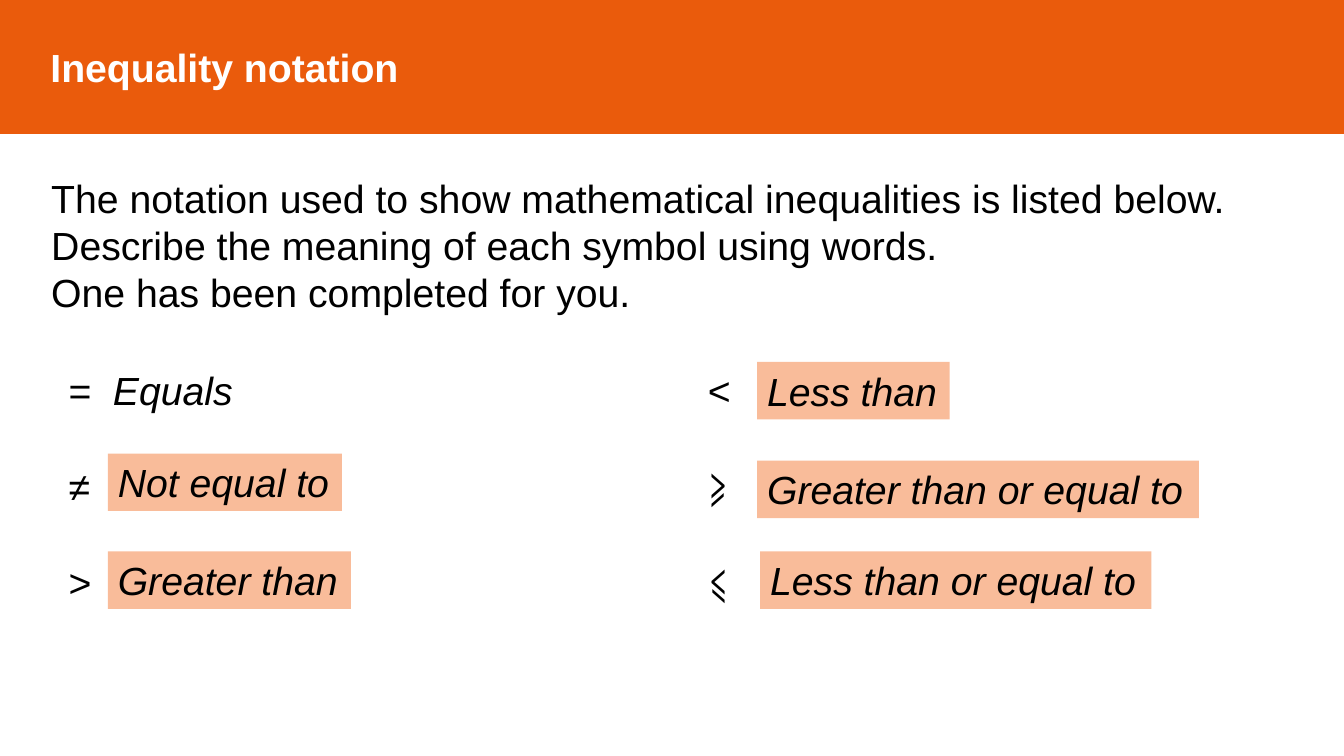
from pptx import Presentation
from pptx.dml.color import RGBColor
from pptx.enum.text import MSO_ANCHOR, MSO_AUTO_SIZE, PP_ALIGN
from pptx.oxml.xmlchemy import OxmlElement
from pptx.util import Inches, Pt

COLOURS = {"band": "EA5B0C", "answer": "F9BC9A", "text": "000000", "heading": "FFFFFF"}
INTRO = [
    "The notation used to show mathematical inequalities is listed below.",
    "Describe the meaning of each symbol using words.",
    "One has been completed for you.",
]
SYMBOL_COLUMNS = [
    (0.58, [[("=\t", False), ("Equals", True)], [("≠", False)], [(">", False)]]),
    (6.92, [[("<", False)], [("⩾", False)], [("⩽", False)]]),
]
ANSWERS = [
    ("Not equal to", 1.07, 4.5, 2.32),
    ("Greater than", 1.07, 5.47, 2.41),
    ("Less than", 7.51, 3.59, 1.91),
    ("Greater than or equal to", 7.51, 4.57, 4.38),
    ("Less than or equal to", 7.54, 5.47, 3.88),
]


def colour(name):
    return RGBColor.from_string(COLOURS[name])


def apply(target, settings):
    for name, value in settings.items():
        setattr(target, name, value)


def place(shape, left, top, width, height):
    apply(shape, {"left": Inches(left), "top": Inches(top),
                  "width": Inches(width), "height": Inches(height)})


def fill(shape, name):
    shape.fill.solid()
    shape.fill.fore_color.rgb = colour(name)


def write(paragraph, text, tint="text", **settings):
    run = paragraph.add_run()
    run.text = text
    apply(run.font, {"name": "Arial", "size": Pt(28), **settings})
    run.font.color.rgb = colour(tint)


def indent(paragraph, margin, first_line):
    properties = paragraph._p.get_or_add_pPr()
    properties.set("marL", str(Inches(margin)))
    properties.set("indent", str(Inches(first_line)))
    return properties


def add_heading(title):
    place(title, 0, 0, 13.33, 1.32)
    fill(title, "band")
    title.line.color.rgb = colour("band")
    title.line.width = Pt(1)
    apply(title.text_frame, {"vertical_anchor": MSO_ANCHOR.MIDDLE,
                             "auto_size": MSO_AUTO_SIZE.NONE})
    heading = title.text_frame.paragraphs[0]
    heading.alignment = PP_ALIGN.LEFT
    indent(heading, 0.4, 0)
    write(heading, "Inequality notation", "heading", bold=True)


def add_intro(slide):
    intro = slide.shapes.add_textbox(Inches(0.41), Inches(1.68), Inches(12.52), Inches(1.51))
    frame = intro.text_frame
    apply(frame, {"word_wrap": True, "auto_size": MSO_AUTO_SIZE.SHAPE_TO_FIT_TEXT})
    for row, sentence in enumerate(INTRO):
        write(frame.add_paragraph() if row else frame.paragraphs[0], sentence)


def add_symbols(body, left, symbols):
    place(body, left, 3.71, 6.34, 2.3)
    frame = body.text_frame
    apply(frame, {"vertical_anchor": MSO_ANCHOR.TOP, "auto_size": MSO_AUTO_SIZE.NONE})
    for row, parts in enumerate(symbols):
        line = frame.add_paragraph() if row else frame.paragraphs[0]
        apply(line, {"line_spacing": 0.7, "space_before": Pt(45 if row else 0)})
        indent(line, 0.44, -0.44).append(OxmlElement("a:buNone"))
        for text, italic in parts:
            write(line, text, italic=italic)


def add_answer(slide, text, left, top, width):
    answer = slide.shapes.add_textbox(Inches(left), Inches(top), Inches(width), Inches(0.57))
    fill(answer, "answer")
    apply(answer.text_frame, {"word_wrap": False,
                              "auto_size": MSO_AUTO_SIZE.SHAPE_TO_FIT_TEXT})
    write(answer.text_frame.paragraphs[0], text, italic=True)


def main():
    deck = Presentation()
    apply(deck, {"slide_width": Inches(13.33), "slide_height": Inches(7.5)})
    slide = deck.slides.add_slide(deck.slide_layouts[3])
    title, *bodies = slide.placeholders
    add_heading(title)
    for body, (left, symbols) in zip(bodies, SYMBOL_COLUMNS):
        add_symbols(body, left, symbols)
    for answer in ANSWERS:
        add_answer(slide, *answer)
    add_intro(slide)
    deck.save("out.pptx")


if __name__ == "__main__":
    main()
